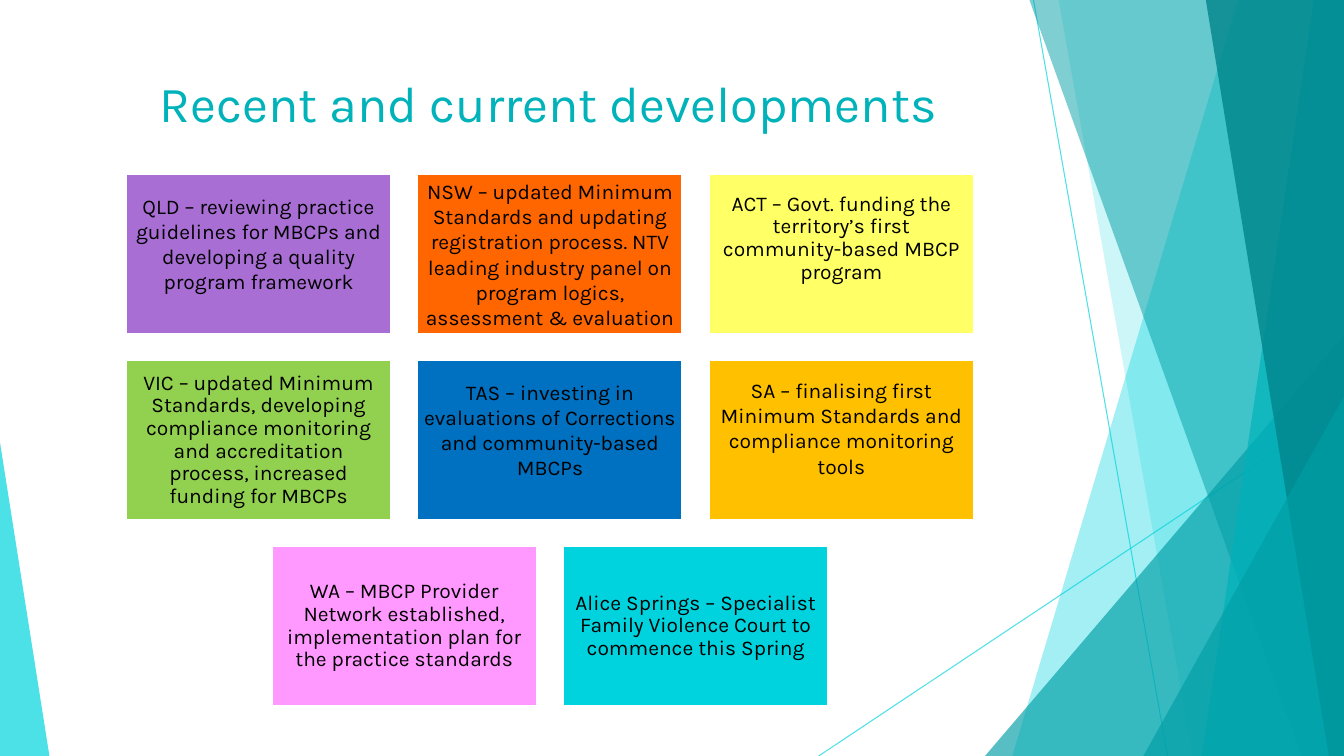
from lxml import etree
from pptx import Presentation
from pptx.dml.color import RGBColor
from pptx.enum.shapes import MSO_CONNECTOR, MSO_SHAPE
from pptx.enum.text import MSO_ANCHOR, PP_ALIGN
from pptx.oxml.ns import qn
from pptx.util import Inches, Pt

STRAIGHT = MSO_CONNECTOR.STRAIGHT
RECT, TRIANGLE = MSO_SHAPE.RECTANGLE, MSO_SHAPE.ISOSCELES_TRIANGLE
CENTER = PP_ALIGN.CENTER
MIDDLE, TOP = MSO_ANCHOR.MIDDLE, MSO_ANCHOR.TOP
FONT = "Karla"
W, H = 13.33, 7.5
COLORS = {
    "cyan": "00D3DE", "teal": "009EA6", "title": "00B2BA", "deep": "00858B",
    "purple": "A86ED4", "orange": "FF6600", "yellow": "FFFF66", "green": "92D050",
    "blue": "0070C0", "amber": "FFC000", "pink": "FF99FF",
    "white": "FFFFFF", "black": "000000",
}


def paint(fmt, color, opacity=100):
    """Give a fill a solid colour with an opacity in percent."""
    fmt.solid()
    fmt.fore_color.rgb = RGBColor.from_string(COLORS[color])
    if opacity < 100:
        clr = fmt._xPr.find(qn("a:solidFill"))[0]
        etree.SubElement(clr, qn("a:alpha")).set("val", str(opacity * 1000))


def add_run(p, text, size, color):
    p.alignment = CENTER
    r = p.add_run()
    r.text = text
    r.font.name = FONT
    r.font.size = Pt(size)
    r.font.color.rgb = RGBColor.from_string(COLORS[color])


prs = Presentation()
prs.slide_width, prs.slide_height = Inches(W), Inches(H)
s = prs.slides.add_slide(prs.slide_layouts[5])

# Thin lines behind the facets
for x1, y1, x2, y2 in [(10.25, 0, 11.58, H), (W, 4.03, 8.12, H)]:
    line = s.shapes.add_connector(STRAIGHT, Inches(x1), Inches(y1), Inches(x2), Inches(y2))
    line.line.width = Pt(0.75)
    paint(line.line.fill, "cyan", 70)
    etree.SubElement(line._element.spPr, qn("a:effectLst"))

# Bands reach from a slanted left edge (top x, bottom x) to the right of the slide;
# triangles stand on the bottom edge (left, top, width, apex position)
facets = [
    ("band", (12.28, 10.04), "cyan", 36),
    ("band", (10.5, 11.83), "cyan", 20),
    ("triangle", (9.77, 3.33, 3.56, 1), "teal", 66),
    ("band", (10.21, 12.91), "teal", 50),
    ("band", (13.03, 11.92), "title", 70),
    ("band", (11.96, 13.18), "deep", 80),
    ("triangle", (11.34, 3.93, 1.99, 1), "teal", 66),
    ("triangle", (0, 4.39, 0.49, 0), "cyan", 70),
]
for kind, place, color, opacity in facets:
    if kind == "band":
        top_x, bottom_x = place
        fb = s.shapes.build_freeform(Inches(top_x), 0)
        fb.add_line_segments([(Inches(x), Inches(y)) for x, y in
                              [(W, 0), (W, H), (bottom_x, H)]], close=True)
        sp = fb.convert_to_shape()
    else:
        x, y, width, apex = place
        sp = s.shapes.add_shape(TRIANGLE, Inches(x), Inches(y), Inches(width), Inches(H - y))
        sp.adjustments[0] = apex
    paint(sp.fill, color, opacity)
    sp.line.fill.background()
    sp.shadow.inherit = False

title = s.shapes.title
title.left, title.top = Inches(0.74), Inches(0.67)
title.width, title.height = Inches(9.4), Inches(0.8)
title.text_frame.vertical_anchor = TOP
title.text_frame.word_wrap = True
add_run(title.text_frame.paragraphs[0], "Recent and current developments", 36, "title")

# Rows of cards, each row centred: colour, line spacing, extra bottom inset, text
CARD_W, CARD_H, STEP_X, STEP_Y = 2.63, 1.58, 2.89, 1.845
MID_X, FIRST_Y, INSET = 5.455, 1.73, 0.06
rows = [
    [("purple", 1, 0.21, "QLD – reviewing practice guidelines for MBCPs and developing "
      "a quality program framework"),
     ("orange", 1, 0, "NSW – updated Minimum Standards and updating registration process. "
      "NTV leading industry panel on program logics, assessment & evaluation"),
     ("yellow", 0.9, 0.31, "ACT – Govt. funding the territory’s first community-based "
      "MBCP program")],
    [("green", 0.9, 0, "VIC – updated Minimum Standards, developing compliance monitoring "
      "and accreditation process, increased funding for MBCPs"),
     ("blue", 1, 0.21, "TAS – investing in evaluations of Corrections and community-based "
      "MBCPs"),
     ("amber", 1, 0.24, "SA – finalising first Minimum Standards and compliance monitoring "
      "tools")],
    [("pink", 0.9, 0, "WA – MBCP Provider Network established, implementation plan for "
      "the practice standards"),
     ("cyan", 0.9, 0, "Alice Springs – Specialist Family Violence Court to commence "
      "this Spring")],
]
for i, row in enumerate(rows):
    left = MID_X - ((len(row) - 1) * STEP_X + CARD_W) / 2
    for j, (color, spacing, lift, text) in enumerate(row):
        card = s.shapes.add_shape(RECT, Inches(left + j * STEP_X), Inches(FIRST_Y + i * STEP_Y),
                                  Inches(CARD_W), Inches(CARD_H))
        card.shadow.inherit = False
        paint(card.fill, color)
        paint(card.line.fill, "white")
        card.line.width = Pt(1.5)
        tf = card.text_frame
        tf.word_wrap = True
        tf.vertical_anchor = MIDDLE
        tf.margin_left = tf.margin_right = tf.margin_top = Inches(INSET)
        tf.margin_bottom = Inches(INSET + lift)
        p = tf.paragraphs[0]
        p.line_spacing = spacing
        add_run(p, text, 15, "black")

prs.save("out.pptx")
